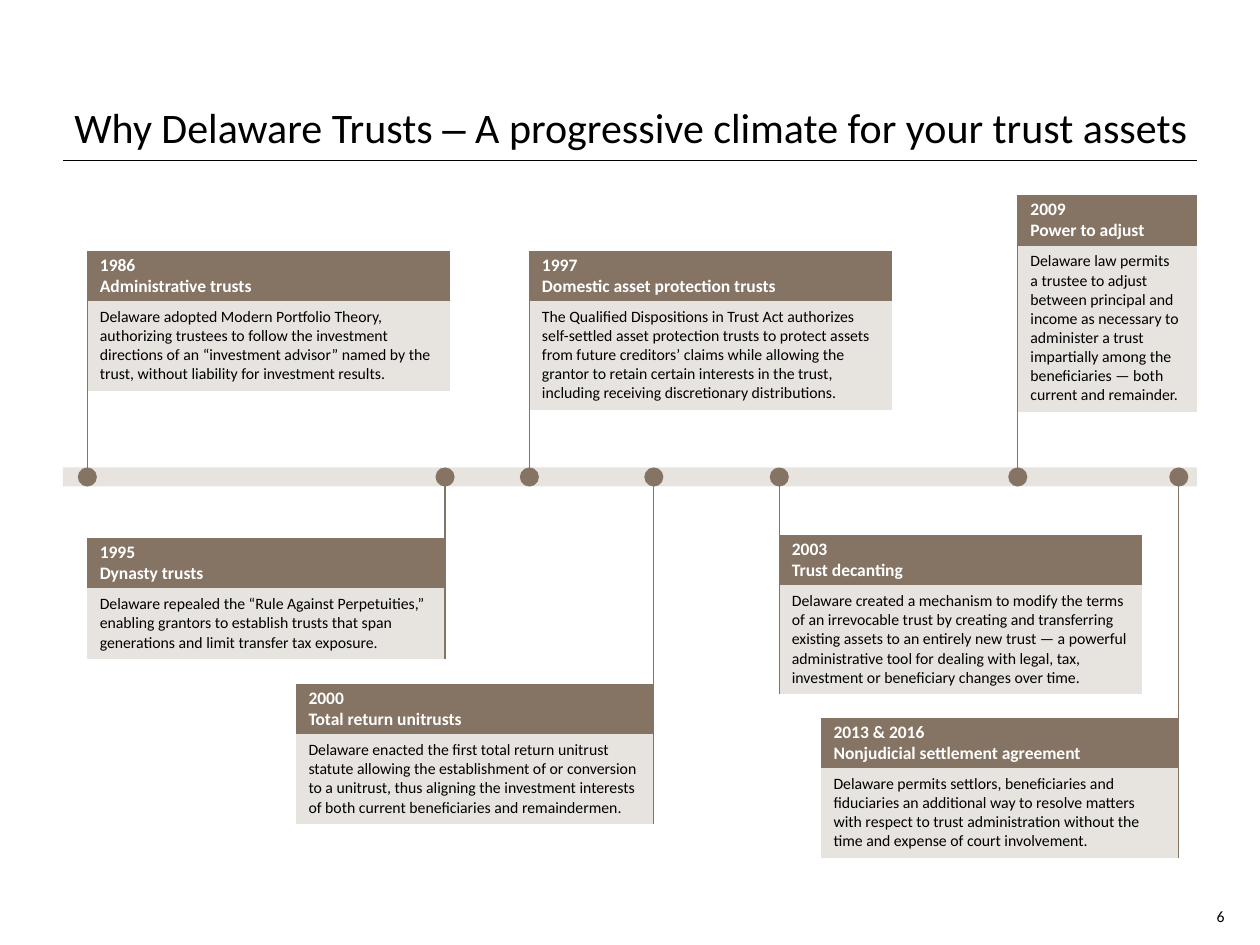
import pptx
import pptx.util
import pptx.dml.color
import pptx.enum.shapes
import pptx.enum.text
import pptx.oxml
import pptx.oxml.ns
from pptx.util import Pt

BROWN, SAND, BLACK, WHITE = "857363", "E7E3DF", "000000", "FFFFFF"
FONT = "Calibri"
NO_STYLE = "{2D5ABB26-0587-4C30-8999-92F81FD0307C}"
BAR_TOP, BAR_HEIGHT = 267.1, 10.9
HEADER_HEIGHT = 28.8

# stem x, stem side, table top, width, gap to axis, body lines, stem weight, year, name, body
BELOW = [
    (254.3, "R", 277, 204.5, 30.5, 3, 0.75, "1995", "Dynasty trusts",
     "Delaware repealed the “Rule Against Perpetuities,” enabling grantors to establish trusts "
     "that span generations and limit transfer tax exposure."),
    (445.3, "L", 275, 207.4, 30.7, 5, 0.75, "2003", "Trust decanting",
     "Delaware created a mechanism to modify the terms of an irrevocable trust by creating and "
     "transferring existing assets to an entirely new trust — a powerful administrative tool for "
     "dealing with legal, tax, investment or beneficiary changes over time."),
    (373.6, "R", 274.3, 204.5, 116.6, 4, 0.75, "2000", "Total return unitrusts",
     "Delaware enacted the first total return unitrust statute allowing the establishment of or "
     "conversion to a unitrust, thus aligning the investment interests of both current "
     "beneficiaries and remaindermen."),
    (673.6, "R", 273, 204.5, 137.2, 4, 0.75, "2013 & 2016", "Nonjudicial settlement agreement",
     "Delaware permits settlors, beneficiaries and fiduciaries an additional way to resolve "
     "matters with respect to trust administration without the time and expense of court "
     "involvement."),
]
ABOVE = [
    (49.9, "L", 143.3, 207.4, 45, 4, 0.5, "1986", "Administrative trusts",
     "Delaware adopted Modern Portfolio Theory, authorizing trustees to follow the investment "
     "directions of an “investment advisor” named by the trust, without liability for investment "
     "results."),
    (302.5, "L", 143.3, 207.4, 37.4, 5, 0.75, "1997", "Domestic asset protection trusts",
     "The Qualified Dispositions in Trust Act authorizes self-settled asset protection trusts to "
     "protect assets from future creditors’ claims while allowing the grantor to retain certain "
     "interests in the trust, including receiving discretionary distributions."),
    (581.6, "L", 111.6, 102.2, 39.6, 8, 0.75, "2009", "Power to adjust",
     "Delaware law permits \va trustee to adjust between principal and income as necessary to "
     "administer a trust impartially among the beneficiaries — both current and remainder."),
]


def color(value):
    return pptx.dml.color.RGBColor.from_string(value)


def format_runs(p, size, fill, bold=False):
    for r in p.runs:
        r.font.name = FONT
        r.font.size = Pt(size)
        r.font.bold = bold
        r.font.color.rgb = color(fill)


def add_filled(s, kind, left, top, width, height, fill):
    sp = s.shapes.add_shape(kind, Pt(left), Pt(top), Pt(width), Pt(height))
    sp.shadow.inherit = False
    sp.fill.solid()
    sp.fill.fore_color.rgb = color(fill)
    sp.line.fill.background()


def add_rule(s):
    line = s.shapes.add_connector(
        pptx.enum.shapes.MSO_CONNECTOR.STRAIGHT, Pt(36), Pt(91.5), Pt(684), Pt(91.5))
    line.line.width = Pt(0.5)
    line.line.color.rgb = color(BLACK)
    line._element.spPr.append(pptx.oxml.parse_xml(
        f'<a:effectLst {pptx.oxml.ns.nsdecls("a")}/>'))


def add_title(s):
    sp = s.shapes.title
    sp.left, sp.top, sp.width, sp.height = Pt(35.3), Pt(39.6), Pt(666.7), Pt(67)
    tf = sp.text_frame
    tf.word_wrap = True
    tf.auto_size = pptx.enum.text.MSO_AUTO_SIZE.NONE
    tf.vertical_anchor = pptx.enum.text.MSO_ANCHOR.TOP
    tf.margin_top = Pt(18.2)
    p = tf.paragraphs[0]
    p.alignment = pptx.enum.text.PP_ALIGN.LEFT
    p.line_spacing = 1.0
    for text in ("Why Delaware Trusts ", "–", " A progressive climate for your trust assets"):
        p.add_run().text = text
    format_runs(p, 24, BLACK)
    p.runs[1].font.name = "Arial"


def add_page_number(s):
    tf = s.shapes.add_textbox(Pt(671.8), Pt(511.2), Pt(28), Pt(18)).text_frame
    tf.word_wrap = True
    tf.margin_left = tf.margin_right = tf.margin_top = tf.margin_bottom = 0
    tf.vertical_anchor = pptx.enum.text.MSO_ANCHOR.BOTTOM
    p = tf.paragraphs[0]
    p.text = "6"
    p.alignment = pptx.enum.text.PP_ALIGN.RIGHT
    format_runs(p, 9, BLACK)


def fill_cell(cell, text, size, text_color, bold, fill, margin):
    cell.margin_left = cell.margin_right = Pt(7.2)
    cell.margin_top = cell.margin_bottom = Pt(margin)
    cell.fill.solid()
    cell.fill.fore_color.rgb = color(fill)
    cell.text_frame.text = text
    for p in cell.text_frame.paragraphs:
        format_runs(p, size, text_color, bold)


def add_border(cell, side, weight):
    cell._tc.get_or_add_tcPr().insert(0, pptx.oxml.parse_xml(
        f'<a:ln{side} {pptx.oxml.ns.nsdecls("a")} w="{Pt(weight)}"><a:solidFill>'
        f'<a:srgbClr val="{BROWN}"/></a:solidFill></a:ln{side}>'))


def add_event(s, event, above):
    x, side, top, width, gap, lines, weight, year, name, body = event
    body_height = lines * 11 + 7.2
    if above:
        heights, header, blank = [HEADER_HEIGHT, body_height, gap], 0, 2
    else:
        heights, header, blank = [gap, HEADER_HEIGHT, body_height], 1, 0
    left = x if side == "L" else x - width
    table = s.shapes.add_table(
        3, 1, Pt(left), Pt(top), Pt(width), Pt(sum(heights))).table
    table.first_row = table.horz_banding = False
    table._tbl.tblPr.find(pptx.oxml.ns.qn("a:tableStyleId")).text = NO_STYLE
    for row, height in zip(table.rows, heights):
        row.height = Pt(height)
    fill_cell(table.cell(header, 0), f"{year}\n{name}", 10, WHITE, True, BROWN, 2.16)
    fill_cell(table.cell(header + 1, 0), body, 9, BLACK, False, SAND, 3.6)
    table.cell(blank, 0).fill.background()
    for i in range(3):
        add_border(table.cell(i, 0), side, weight)


def main():
    prs = pptx.Presentation()
    prs.slide_width, prs.slide_height = Pt(720), Pt(540)
    s = prs.slides.add_slide(prs.slide_layouts[5])
    shapes = pptx.enum.shapes.MSO_SHAPE
    add_rule(s)
    add_title(s)
    add_page_number(s)
    add_filled(s, shapes.RECTANGLE, 36, BAR_TOP, 648, BAR_HEIGHT, SAND)
    for event in BELOW:
        add_event(s, event, False)
    for event in ABOVE:
        add_event(s, event, True)
    for x, *rest in BELOW + ABOVE:
        add_filled(s, shapes.OVAL, x - BAR_HEIGHT / 2, BAR_TOP, BAR_HEIGHT, BAR_HEIGHT, BROWN)
    prs.save("out.pptx")


if __name__ == "__main__":
    main()
